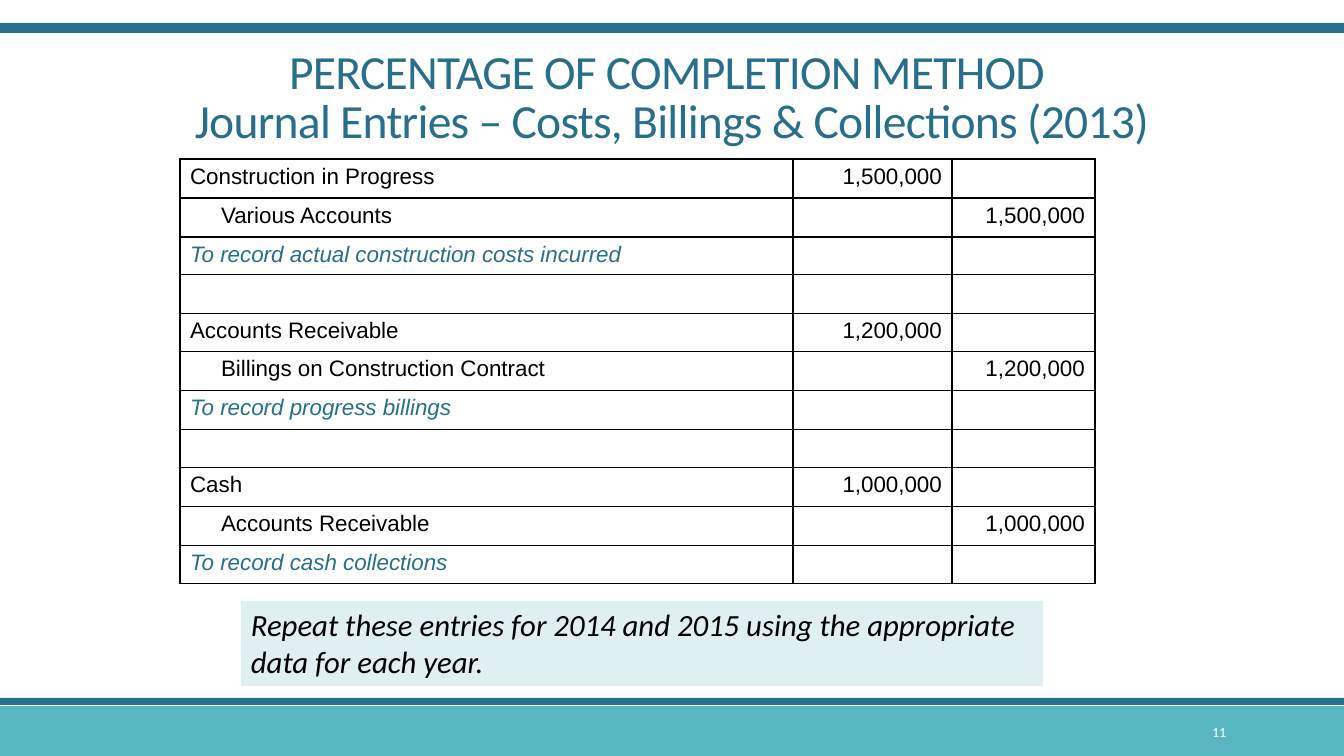
from dataclasses import dataclass
from lxml.etree import SubElement
from pptx import Presentation
from pptx.dml.color import RGBColor
from pptx.enum.shapes import MSO_SHAPE
from pptx.enum.text import MSO_ANCHOR, MSO_AUTO_SIZE, PP_ALIGN
from pptx.oxml.ns import qn
from pptx.util import Pt


@dataclass(frozen=True)
class Theme:
    """Colours, fonts and type sizes of the slide."""
    dark: str = "276F8B"
    teal: str = "58B6C0"
    pale: str = "DEF0F2"
    black: str = "000000"
    white: str = "FFFFFF"
    heading_font: str = "Calibri"
    table_font: str = "Arial"
    title_size: int = 34
    note_size: int = 22
    table_size: int = 16
    number_size: int = 10
    thin: float = 1
    thick: float = 2.25


THEME = Theme()
EMU_PER_PX = 914400 / 100.8
COLUMNS = [613, 159, 143]
ROWS = [39, 39, 37, 39, 38, 39, 39, 38, 39, 39, 38]
INDENT = 31
ENTRIES = [
    ("Construction in Progress", "Various Accounts", "1,500,000",
     "To record actual construction costs incurred"),
    ("Accounts Receivable", "Billings on Construction Contract", "1,200,000",
     "To record progress billings"),
    ("Cash", "Accounts Receivable", "1,000,000",
     "To record cash collections"),
]


def px(length):
    """Turn pixels into EMU."""
    return round(length * EMU_PER_PX)


def place(shape, left, top, width, height):
    """Move and size a shape in pixels."""
    shape.left, shape.top = px(left), px(top)
    shape.width, shape.height = px(width), px(height)


def add_span(para, text, size, color, font=THEME.heading_font, italic=False):
    """Add one formatted run to a paragraph."""
    span = para.add_run()
    span.text = text
    span.font.name = font
    span.font.size = Pt(size)
    span.font.italic = italic
    span.font.color.rgb = RGBColor.from_string(color)
    return span


def add_panel(page, left, top, width, height, color):
    """Add a flat filled rectangle."""
    panel = page.shapes.add_shape(
        MSO_SHAPE.RECTANGLE, px(left), px(top), px(width), px(height))
    panel.shadow.inherit = False
    panel.fill.solid()
    panel.fill.fore_color.rgb = RGBColor.from_string(color)
    panel.line.fill.background()
    return panel


def set_title(page, lines):
    """Fill the title placeholder with centred lines."""
    title = page.shapes.title
    place(title, 0, 46, 1344, 126)
    frame = title.text_frame
    frame.word_wrap = True
    frame.auto_size = MSO_AUTO_SIZE.NONE
    frame.vertical_anchor = MSO_ANCHOR.TOP
    para = frame.paragraphs[0]
    para.alignment = PP_ALIGN.CENTER
    para.line_spacing = 0.85
    for index, line in enumerate(lines):
        if index:
            para.add_line_break()
        span = add_span(para, line, THEME.title_size, THEME.dark)
        span.font._element.set("spc", "-50")


def set_borders(cell, widths):
    """Draw the four black borders of a cell."""
    properties = cell._tc.get_or_add_tcPr()
    for side, width in zip("LRTB", widths):
        line = SubElement(properties, qn(f"a:ln{side}"), w=str(Pt(width)))
        fill = SubElement(line, qn("a:solidFill"))
        SubElement(fill, qn("a:srgbClr"), val=THEME.black)


def journal_rows():
    """List the table rows, with a blank row between entries."""
    rows = []
    for debit, credit, amount, reason in ENTRIES:
        if rows:
            rows.append(("", "", ""))
        rows += [(debit, amount, ""), (credit, "", amount), (reason, "", "")]
    return rows


def fill_cell(cell, text, row, column):
    """Write one journal cell in the style of its row and column."""
    para = cell.text_frame.paragraphs[0]
    is_reason = row % 4 == 2
    if column:
        para.alignment = PP_ALIGN.RIGHT
    elif row % 4 == 1:
        para._p.get_or_add_pPr().set("marL", str(px(INDENT)))
    if text:
        add_span(para, text, THEME.table_size,
                 THEME.dark if is_reason else THEME.black,
                 THEME.table_font, is_reason)
    else:
        SubElement(para._p, qn("a:endParaRPr"), sz=str(THEME.table_size * 100))


def add_journal(page):
    """Add the table of journal entries."""
    table = page.shapes.add_table(
        len(ROWS), len(COLUMNS), px(180), px(159),
        px(sum(COLUMNS)), px(sum(ROWS))).table
    table.first_row = table.horz_banding = False
    for column, width in zip(table.columns, COLUMNS):
        column.width = px(width)
    for row, height in zip(table.rows, ROWS):
        row.height = px(height)
    for row, texts in enumerate(journal_rows()):
        for column, text in enumerate(texts):
            cell = table.cell(row, column)
            fill_cell(cell, text, row, column)
            outer = (column == 0, column == len(COLUMNS) - 1, row == 0, False)
            set_borders(cell, [THEME.thick if edge else THEME.thin
                               for edge in outer])
            cell.fill.background()


def add_note(page, text):
    """Add the tinted note below the table."""
    frame = add_panel(page, 241, 601, 802, 85, THEME.pale).text_frame
    frame.word_wrap = True
    frame.vertical_anchor = MSO_ANCHOR.TOP
    para = frame.paragraphs[0]
    para.alignment = PP_ALIGN.LEFT
    add_span(para, text, THEME.note_size, THEME.black, italic=True)


def add_page_number(page, number):
    """Add the page number in the footer."""
    box = page.shapes.add_textbox(px(1092), px(712), px(144), px(40))
    frame = box.text_frame
    frame.word_wrap = True
    frame.vertical_anchor = MSO_ANCHOR.MIDDLE
    para = frame.paragraphs[0]
    para.alignment = PP_ALIGN.RIGHT
    add_span(para, number, THEME.number_size, THEME.white)


def main():
    """Build and save the slide."""
    deck = Presentation()
    deck.slide_width, deck.slide_height = px(1344), px(756)
    page = deck.slides.add_slide(deck.slide_layouts[5])
    add_panel(page, 0, 706, 1344, 50, THEME.teal)
    add_panel(page, 0, 698, 1344, 7, THEME.dark)
    add_panel(page, 0, 23, 1344, 10, THEME.dark)
    set_title(page, ["PERCENTAGE OF COMPLETION METHOD ",
                     "Journal Entries – Costs, Billings & Collections (2013)"])
    add_journal(page)
    add_note(page, "Repeat these entries for 2014 and 2015 using the "
                   "appropriate data for each year.")
    add_page_number(page, "11")
    deck.save("out.pptx")


if __name__ == "__main__":
    main()
